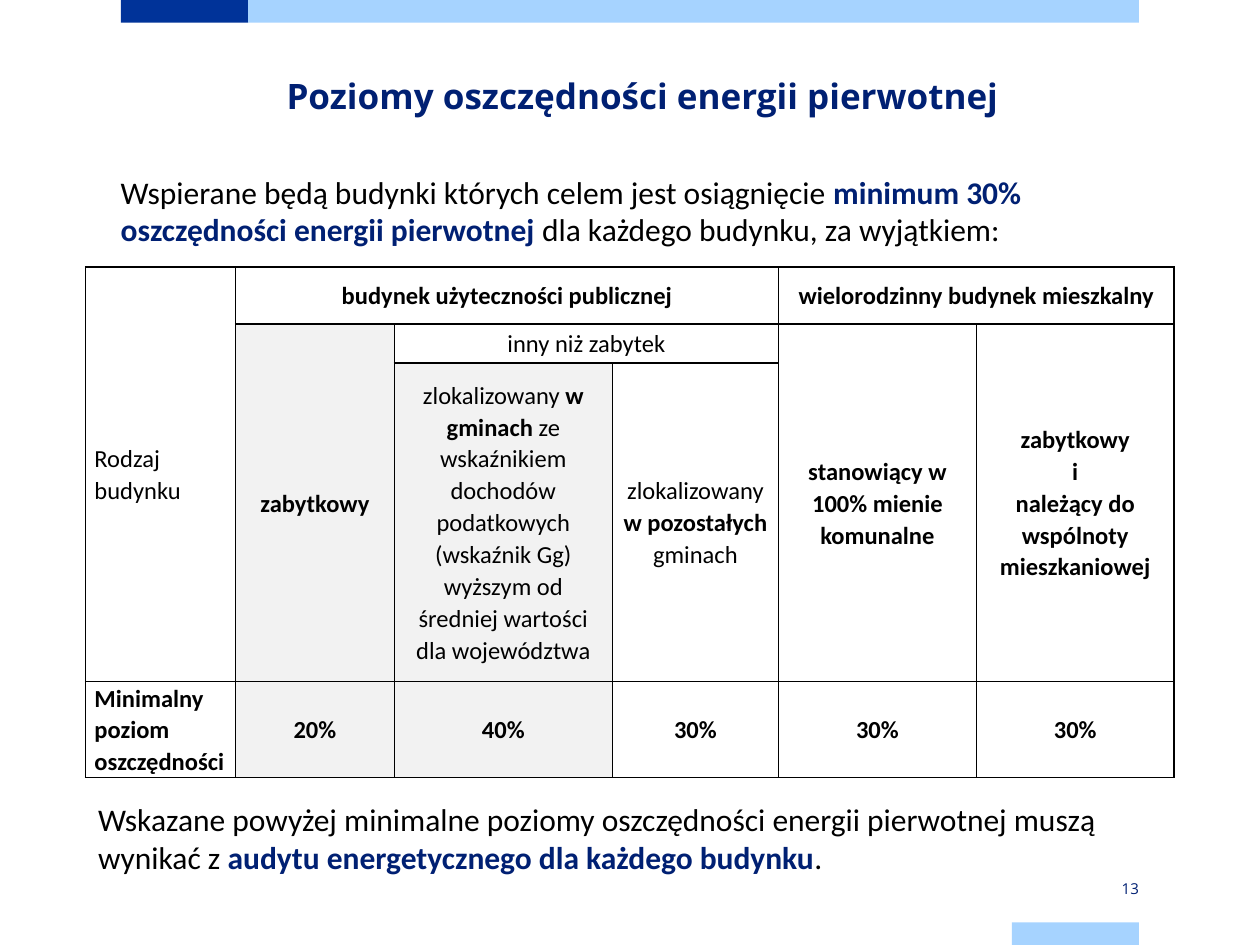
"""Build a slide on the primary energy savings required per building type."""
from lxml import etree
from pptx import Presentation
from pptx.dml.color import RGBColor
from pptx.enum.shapes import MSO_SHAPE
from pptx.enum.text import MSO_ANCHOR, PP_ALIGN
from pptx.oxml.ns import qn
from pptx.util import Inches, Pt

RECTANGLE = MSO_SHAPE.RECTANGLE
TOP, MIDDLE = MSO_ANCHOR.TOP, MSO_ANCHOR.MIDDLE
LEFT, CENTER, RIGHT = PP_ALIGN.LEFT, PP_ALIGN.CENTER, PP_ALIGN.RIGHT

BLACK = RGBColor(0, 0, 0)
WHITE = RGBColor(255, 255, 255)
GRAY = RGBColor(0xF2, 0xF2, 0xF2)
NAVY = RGBColor(0, 0x20, 0x73)
BLUE = RGBColor(0, 0x33, 0x99)
SKY = RGBColor(0xA6, 0xD3, 0xFF)

TITLE = "Poziomy oszczędności energii pierwotnej"
PAGE_NUMBER = "13"
BOLD_MARK = "*"

STATEMENTS = [
    ("Wspierane będą budynki których celem jest osiągnięcie *minimum 30% "
     "oszczędności energii pierwotnej* dla każdego budynku, za wyjątkiem:",
     (0.86, 1.32, 8.08, 0.71)),
    ("Wskazane powyżej minimalne poziomy oszczędności energii pierwotnej muszą "
     "wynikać z *audytu energetycznego dla każdego budynku*.",
     (0.68, 6.3, 8.64, 0.71)),
]

BARS = [
    (BLUE, (0.96, 0, 1.01, 0.18)),
    (SKY, (1.97, 0, 7.07, 0.18)),
    (SKY, (8.03, 7.32, 1.01, 0.18)),
]

COLUMN_WIDTHS = [1.19, 1.26, 1.73, 1.32, 1.57, 1.57]
ROW_HEIGHTS = [0.45, 0.31, 2.53, 0.76]
TABLE_ROWS = [
    ["Rodzaj budynku", "*budynek użyteczności publicznej*", "", "",
     "*wielorodzinny budynek mieszkalny*", ""],
    ["", "*zabytkowy*", "inny niż zabytek", "",
     "*stanowiący w 100% mienie komunalne*",
     "*zabytkowy*\n*i*\n*należący do wspólnoty mieszkaniowej*"],
    ["", "",
     "zlokalizowany *w gminach* ze wskaźnikiem dochodów podatkowych "
     "(wskaźnik Gg) wyższym od średniej wartości dla województwa",
     "zlokalizowany *w pozostałych* gminach", "", ""],
    ["*Minimalny poziom oszczędności*", "*20%*", "*40%*", "*30%*", "*30%*", "*30%*"],
]
MERGES = [
    ((0, 0), (2, 0)), ((0, 1), (0, 3)), ((0, 4), (0, 5)), ((1, 1), (2, 1)),
    ((1, 2), (1, 3)), ((1, 4), (2, 4)), ((1, 5), (2, 5)),
]
SHADED = {(1, 1), (2, 1), (2, 2), (3, 1), (3, 2)}


def inches(box):
    return [Inches(length) for length in box]


def style(font, name, size, color, bold=False):
    font.name, font.size, font.bold = name, Pt(size), bold
    font.color.rgb = color


def write_marked(paragraph, text, size, bold_color):
    for index, part in enumerate(text.split(BOLD_MARK)):
        if part:
            run = paragraph.add_run()
            run.text = part
            bold = index % 2 == 1
            style(run.font, "Calibri", size, bold_color if bold else BLACK, bold)


def set_insets(frame, horizontal, vertical):
    frame.margin_left = frame.margin_right = Inches(horizontal)
    frame.margin_top = frame.margin_bottom = Inches(vertical)


def add_borders(cell):
    properties = cell._tc.get_or_add_tcPr()
    for side in ("a:lnL", "a:lnR", "a:lnT", "a:lnB"):
        line = etree.SubElement(properties, qn(side), w=str(Pt(1)))
        fill = etree.SubElement(line, qn("a:solidFill"))
        etree.SubElement(fill, qn("a:srgbClr"), val=str(BLACK))


def add_bar(slide, color, box):
    bar = slide.shapes.add_shape(RECTANGLE, *inches(box))
    bar.shadow.inherit = False
    bar.fill.solid()
    bar.fill.fore_color.rgb = color
    bar.line.fill.background()


def add_title(slide):
    title = slide.shapes.title
    title.left, title.top, title.width, title.height = inches((1.06, 0.5, 8.08, 1.25))
    frame = title.text_frame
    frame.text = TITLE
    frame.vertical_anchor = TOP
    set_insets(frame, 0, 0)
    heading = frame.paragraphs[0]
    heading.alignment = CENTER
    heading.line_spacing = Pt(30.8)
    style(heading.runs[0].font, "Open Sans", 20, NAVY, True)


def add_savings_table(slide):
    box = (0.68, 2.12, sum(COLUMN_WIDTHS), sum(ROW_HEIGHTS))
    table = slide.shapes.add_table(
        len(ROW_HEIGHTS), len(COLUMN_WIDTHS), *inches(box)).table
    table.first_row = table.horz_banding = False
    for column, width in zip(table.columns, COLUMN_WIDTHS):
        column.width = Inches(width)
    for row, height in zip(table.rows, ROW_HEIGHTS):
        row.height = Inches(height)
    for first, last in MERGES:
        table.cell(*first).merge(table.cell(*last))

    for r, texts in enumerate(TABLE_ROWS):
        for c, text in enumerate(texts):
            cell = table.cell(r, c)
            add_borders(cell)
            cell.fill.solid()
            cell.fill.fore_color.rgb = GRAY if (r, c) in SHADED else WHITE
            cell.vertical_anchor = MIDDLE
            set_insets(cell, 0.07, 0)
            for index, line in enumerate(text.split("\n")):
                frame = cell.text_frame
                paragraph = frame.add_paragraph() if index else frame.paragraphs[0]
                paragraph.alignment = CENTER if c else LEFT
                paragraph.line_spacing = 1.07
                paragraph.font.size = Pt(14)
                write_marked(paragraph, line, 14, BLACK)
    table.cell(len(TABLE_ROWS) - 1, 0).vertical_anchor = TOP


def add_statement(slide, text, box):
    frame = slide.shapes.add_textbox(*inches(box)).text_frame
    frame.word_wrap = True
    write_marked(frame.paragraphs[0], text, 18, NAVY)


def add_page_number(slide):
    frame = slide.shapes.add_textbox(*inches((8.03, 6.96, 1.01, 0.18))).text_frame
    frame.word_wrap = True
    frame.vertical_anchor = MIDDLE
    set_insets(frame, 0, 0.08)
    frame.text = PAGE_NUMBER
    number = frame.paragraphs[0]
    number.alignment = RIGHT
    style(number.runs[0].font, "Open Sans", 8.6, NAVY)


def main():
    deck = Presentation()
    deck.slide_width, deck.slide_height = Inches(10), Inches(7.5)
    slide = deck.slides.add_slide(deck.slide_layouts.get_by_name("Title Only"))
    for color, box in BARS:
        add_bar(slide, color, box)
    add_title(slide)
    add_savings_table(slide)
    for text, box in STATEMENTS:
        add_statement(slide, text, box)
    add_page_number(slide)
    deck.save("out.pptx")


if __name__ == "__main__":
    main()
